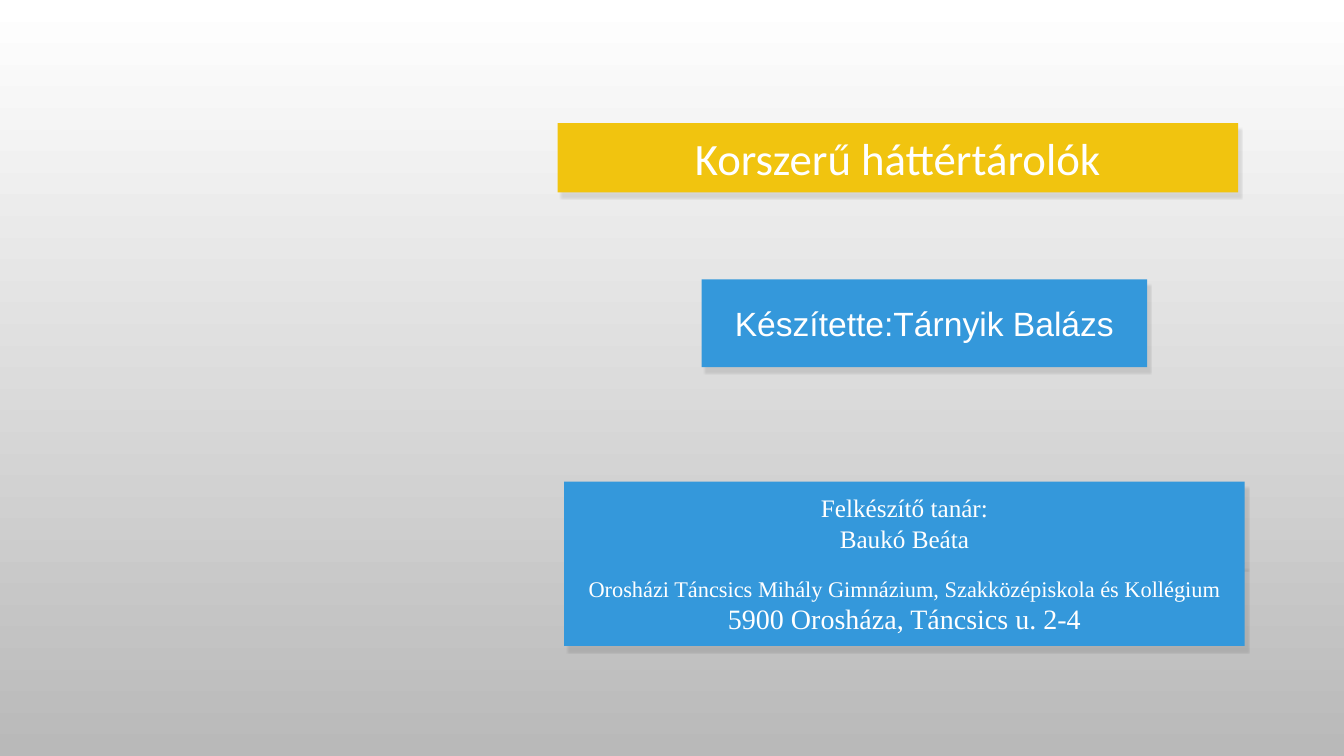
from dataclasses import dataclass

from lxml.etree import SubElement
from pptx import Presentation
from pptx.dml.color import RGBColor as Rgb
from pptx.enum.shapes import MSO_SHAPE as Shape
from pptx.enum.text import MSO_ANCHOR as Anchor, MSO_AUTO_SIZE as AutoSize, PP_ALIGN as Align
from pptx.oxml.ns import qn
from pptx.util import Cm, Pt

# Content: each line is (text, size role)
TITLE = [("Korszerű háttértárolók", "title")]
AUTHOR = [("Készítette:Tárnyik Balázs", "author")]
TEACHER = [("Felkészítő tanár:\nBaukó Beáta", "teacher")]
SCHOOL = [
    ("Orosházi Táncsics Mihály Gimnázium, Szakközépiskola és Kollégium", "school"),
    ("5900 Orosháza, Táncsics u. 2-4", "address"),
]


@dataclass(frozen=True)
class Theme:
    yellow = Rgb.from_string("F1C40F")
    blue = Rgb.from_string("3498DB")
    text = Rgb.from_string("FFFFFF")
    background = (Rgb.from_string("FFFFFF"), Rgb.from_string("B9B9B9"))
    shadow = "000000"
    sizes = {"title": 32, "author": 24, "teacher": 18, "school": 16, "address": 20}


THEME = Theme()

# Layout in centimetres: left, top, width, height
WIDE, CARD_LEFT, CARD_TOP, CARD_HEIGHT = 17.15, 14.22, 12.14, 2.07
TITLE_AREA = (14.05, 3.1, WIDE, 1.75)
AUTHOR_AREA = (17.68, 7.04, 11.23, 2.21)
TEACHER_AREA, SCHOOL_AREA = (
    (CARD_LEFT, CARD_TOP + row * CARD_HEIGHT, WIDE, CARD_HEIGHT) for row in range(2)
)


def add_shadow(box):
    box.shadow.inherit = False
    effects = box._element.spPr.find(qn("a:effectLst"))
    shadow = SubElement(
        effects, qn("a:outerShdw"), blurRad=str(Pt(1)), dist=str(Pt(5)),
        dir=str(60 * 60000), algn="tl", rotWithShape="0",
    )
    color = SubElement(shadow, qn("a:srgbClr"), val=THEME.shadow)
    SubElement(color, qn("a:alpha"), val="10000")


def style_panel(box, area, fill, lines, font):
    box.left, box.top, box.width, box.height = map(Cm, area)
    box.fill.solid()
    box.fill.fore_color.rgb = fill
    box.line.fill.background()
    add_shadow(box)

    frame = box.text_frame
    frame.word_wrap = True
    frame.auto_size = AutoSize.NONE
    frame.vertical_anchor = Anchor.MIDDLE
    for index, (text, role) in enumerate(lines):
        para = frame.add_paragraph() if index else frame.paragraphs[0]
        para.text = text
        para.alignment = Align.CENTER
        para.font.name = font
        para.font.size = Pt(THEME.sizes[role])
        para.font.color.rgb = THEME.text


def main():
    deck = Presentation()
    deck.slide_width, deck.slide_height = Cm(33.87), Cm(19.05)
    page = deck.slides.add_slide(deck.slide_layouts[5])

    # Background, light at the top
    backdrop = page.background.fill
    backdrop.gradient()
    backdrop.gradient_angle = 270
    for stop, color in zip(backdrop.gradient_stops, THEME.background):
        stop.color.rgb = color

    # Title
    style_panel(page.shapes.title, TITLE_AREA, THEME.yellow, TITLE, "Calibri")

    # Author, teacher and school
    for area, lines, font in (
        (AUTHOR_AREA, AUTHOR, "Arial"),
        (TEACHER_AREA, TEACHER, "Times New Roman"),
        (SCHOOL_AREA, SCHOOL, "Times New Roman"),
    ):
        box = page.shapes.add_shape(Shape.RECTANGLE, *map(Cm, area))
        style_panel(box, area, THEME.blue, lines, font)

    deck.save("out.pptx")


if __name__ == "__main__":
    main()
